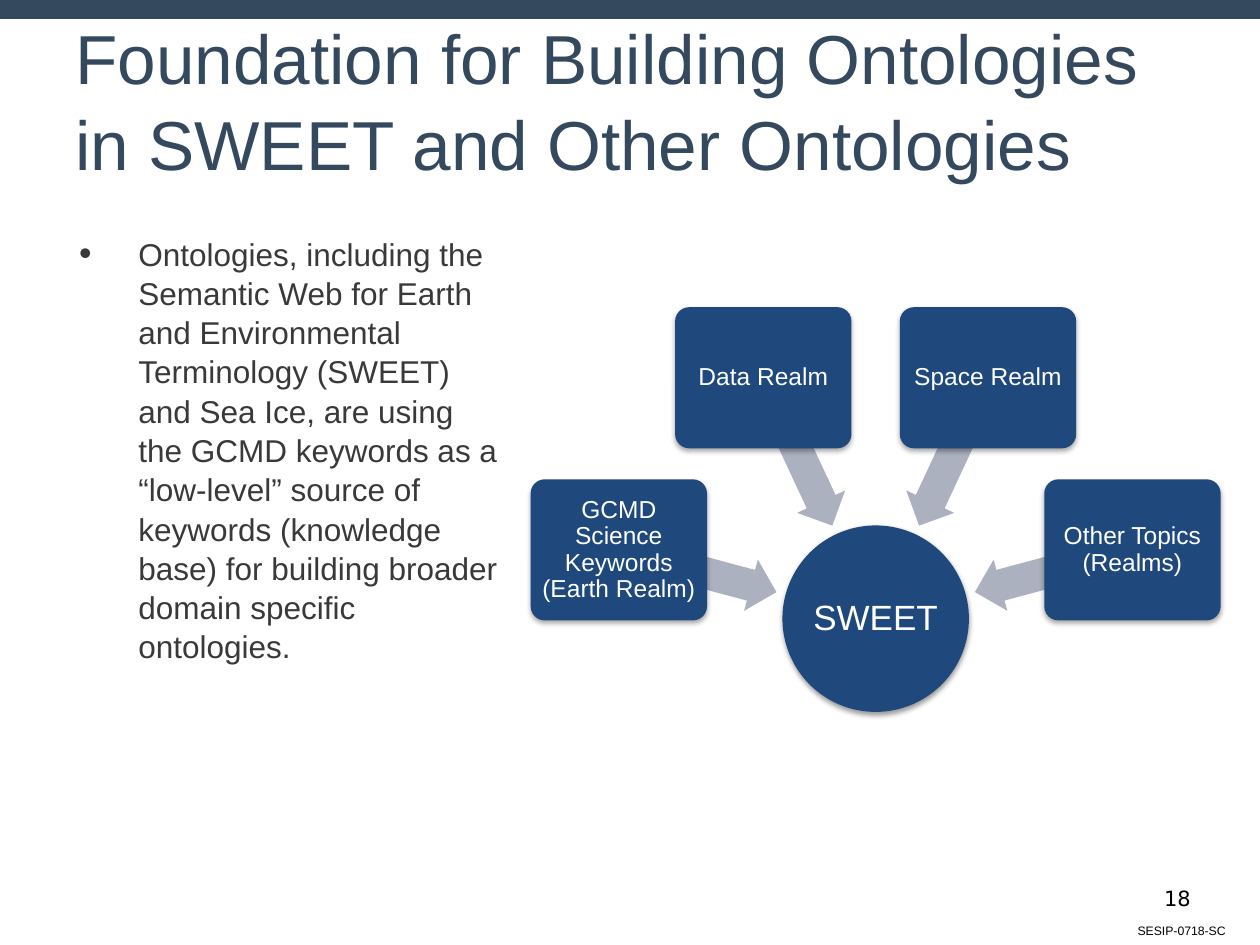
"""Build the slide on ontologies that feed SWEET."""
from dataclasses import dataclass
from math import cos, radians, sin

from lxml import etree
from pptx import Presentation
from pptx.dml.color import RGBColor
from pptx.enum.shapes import MSO_SHAPE
from pptx.enum.text import MSO_ANCHOR, PP_ALIGN
from pptx.oxml.ns import qn
from pptx.shapes.autoshape import Shape
from pptx.slide import Slide
from pptx.util import Inches, Pt

RECTANGLE = MSO_SHAPE.RECTANGLE
ROUNDED = MSO_SHAPE.ROUNDED_RECTANGLE
OVAL = MSO_SHAPE.OVAL
LEFT_ARROW = MSO_SHAPE.LEFT_ARROW
TOP, MIDDLE = MSO_ANCHOR.TOP, MSO_ANCHOR.MIDDLE
LEFT, CENTER = PP_ALIGN.LEFT, PP_ALIGN.CENTER

SLATE = RGBColor(0x34, 0x49, 0x5E)
CHARCOAL = RGBColor(0x39, 0x39, 0x39)
NAVY = RGBColor(0x1F, 0x49, 0x7D)
GRAY_BLUE = RGBColor(0xAC, 0xB1, 0xBF)
BLACK = RGBColor(0, 0, 0)
WHITE = RGBColor(0xFF, 0xFF, 0xFF)

HUB_X, HUB_Y, HUB_SIZE = 6.95, 4.91, 1.48
ARROW_ORBIT, ARROW_WIDTH, ARROW_HEIGHT = 1.46, 1.29, 0.42
TOPIC_ORBIT, TOPIC_WIDTH, TOPIC_HEIGHT = 2.11, 1.4, 1.12


@dataclass(frozen=True)
class TextStyle:
    """Look of one block of text."""

    size: float
    color: RGBColor
    font: str = "Arial"
    align: PP_ALIGN = LEFT
    anchor: MSO_ANCHOR = TOP
    inset_x: float = 0.1
    inset_y: float = 0.1
    line_spacing: float = 1.0


@dataclass(frozen=True)
class Topic:
    """Keyword source placed around the hub at an angle in degrees."""

    label: str
    angle: float


TITLE_STYLE = TextStyle(39.6, SLATE, anchor=MIDDLE, line_spacing=1.04)
BODY_STYLE = TextStyle(18, CHARCOAL, line_spacing=1.04)
NUMBER_STYLE = TextStyle(12, BLACK, font="DejaVu Sans", inset_y=0.05)
CODE_STYLE = TextStyle(7, BLACK, inset_y=0.05)
HUB_STYLE = TextStyle(20, WHITE, "Arial", CENTER, MIDDLE, 0.01, 0.01, 0.9)
TOPIC_STYLE = TextStyle(14, WHITE, "Arial", CENTER, MIDDLE, 0.03, 0.03, 0.9)

TOPICS = (
    Topic("GCMD Science Keywords (Earth Realm)", 195),
    Topic("Data Realm", 245),
    Topic("Space Realm", 295),
    Topic("Other Topics (Realms)", 345),
)


def write(shape: Shape, text: str, style: TextStyle) -> None:
    """Put one styled paragraph in a shape."""
    frame = shape.text_frame
    frame.word_wrap = True
    frame.vertical_anchor = style.anchor
    frame.margin_left = frame.margin_right = Inches(style.inset_x)
    frame.margin_top = frame.margin_bottom = Inches(style.inset_y)
    paragraph = frame.paragraphs[0]
    paragraph.alignment = style.align
    paragraph.line_spacing = style.line_spacing
    run = paragraph.add_run()
    run.text = text
    run.font.size = Pt(style.size)
    run.font.name = style.font
    run.font.color.rgb = style.color


def add_text(slide: Slide, left: float, top: float, width: float, height: float,
             text: str, style: TextStyle) -> Shape:
    """Add a text box."""
    box = slide.shapes.add_textbox(Inches(left), Inches(top), Inches(width), Inches(height))
    write(box, text, style)
    return box


def add_filled(slide: Slide, kind: MSO_SHAPE, center_x: float, center_y: float,
               width: float, height: float, color: RGBColor) -> Shape:
    """Add a borderless shape around a center point."""
    shape = slide.shapes.add_shape(
        kind, Inches(center_x - width / 2), Inches(center_y - height / 2),
        Inches(width), Inches(height))
    shape.shadow.inherit = False
    shape.fill.solid()
    shape.fill.fore_color.rgb = color
    shape.line.fill.background()
    return shape


def cast_shadow(shape: Shape, opacity: int, distance: float) -> None:
    """Give a shape a soft shadow straight below it."""
    effects = shape.element.spPr.find(qn("a:effectLst"))
    shadow = etree.SubElement(
        effects, qn("a:outerShdw"), blurRad=str(Pt(3.1)), dist=str(Pt(distance)),
        dir=str(90 * 60000), rotWithShape="0")
    color = etree.SubElement(shadow, qn("a:srgbClr"), val=str(BLACK))
    etree.SubElement(color, qn("a:alpha"), val=str(opacity * 1000))


def add_bullet(box: Shape) -> None:
    """Turn the paragraph of a text box into a bulleted one."""
    properties = box.text_frame.paragraphs[0]._p.get_or_add_pPr()
    properties.set("marL", str(Inches(0.5)))
    properties.set("indent", str(Inches(-0.47)))
    color = etree.SubElement(properties, qn("a:buClr"))
    etree.SubElement(color, qn("a:srgbClr"), val=str(CHARCOAL))
    etree.SubElement(properties, qn("a:buSzPct"), val="113000")
    etree.SubElement(properties, qn("a:buFont"), typeface="Arial")
    etree.SubElement(properties, qn("a:buChar"), char="•")


def add_hub(slide: Slide) -> None:
    """Add the central circle."""
    hub = add_filled(slide, OVAL, HUB_X, HUB_Y, HUB_SIZE, HUB_SIZE, NAVY)
    cast_shadow(hub, 38, 1.6)
    write(hub, "SWEET", HUB_STYLE)


def add_topic(slide: Slide, topic: Topic) -> None:
    """Add a topic and its arrow toward the hub."""
    across, down = cos(radians(topic.angle)), sin(radians(topic.angle))
    arrow = add_filled(slide, LEFT_ARROW, HUB_X + ARROW_ORBIT * across,
                       HUB_Y + ARROW_ORBIT * down, ARROW_WIDTH, ARROW_HEIGHT, GRAY_BLUE)
    arrow.adjustments[0] = 0.6
    arrow.adjustments[1] = 0.5
    arrow.rotation = topic.angle
    card = add_filled(slide, ROUNDED, HUB_X + TOPIC_ORBIT * across,
                      HUB_Y + TOPIC_ORBIT * down, TOPIC_WIDTH, TOPIC_HEIGHT, NAVY)
    card.adjustments[0] = 0.1
    cast_shadow(card, 35, 1.8)
    write(card, topic.label, TOPIC_STYLE)


def main() -> None:
    """Build and save the slide."""
    deck = Presentation()
    deck.slide_width, deck.slide_height = Inches(10), Inches(7.5)
    slide = deck.slides.add_slide(deck.slide_layouts[6])
    add_filled(slide, RECTANGLE, 5, 0.075, 10, 0.15, SLATE)
    add_text(slide, 8.93, 7.28, 1.19, 0.15, "SESIP-0718-SC", CODE_STYLE)
    add_text(slide, 9.14, 6.98, 0.58, 0.3, "18", NUMBER_STYLE)
    add_text(slide, 0.5, 0.3, 9, 0.96,
             "Foundation for Building Ontologies in SWEET and Other Ontologies", TITLE_STYLE)
    summary = add_text(
        slide, 0.5, 1.75, 3.61, 4.02,
        "Ontologies, including the Semantic Web for Earth and Environmental "
        "Terminology (SWEET) and Sea Ice, are using the GCMD keywords as a "
        "“low-level” source of keywords (knowledge base) for building broader "
        "domain specific ontologies.", BODY_STYLE)
    add_bullet(summary)
    add_hub(slide)
    for topic in TOPICS:
        add_topic(slide, topic)
    deck.save("out.pptx")


if __name__ == "__main__":
    main()
